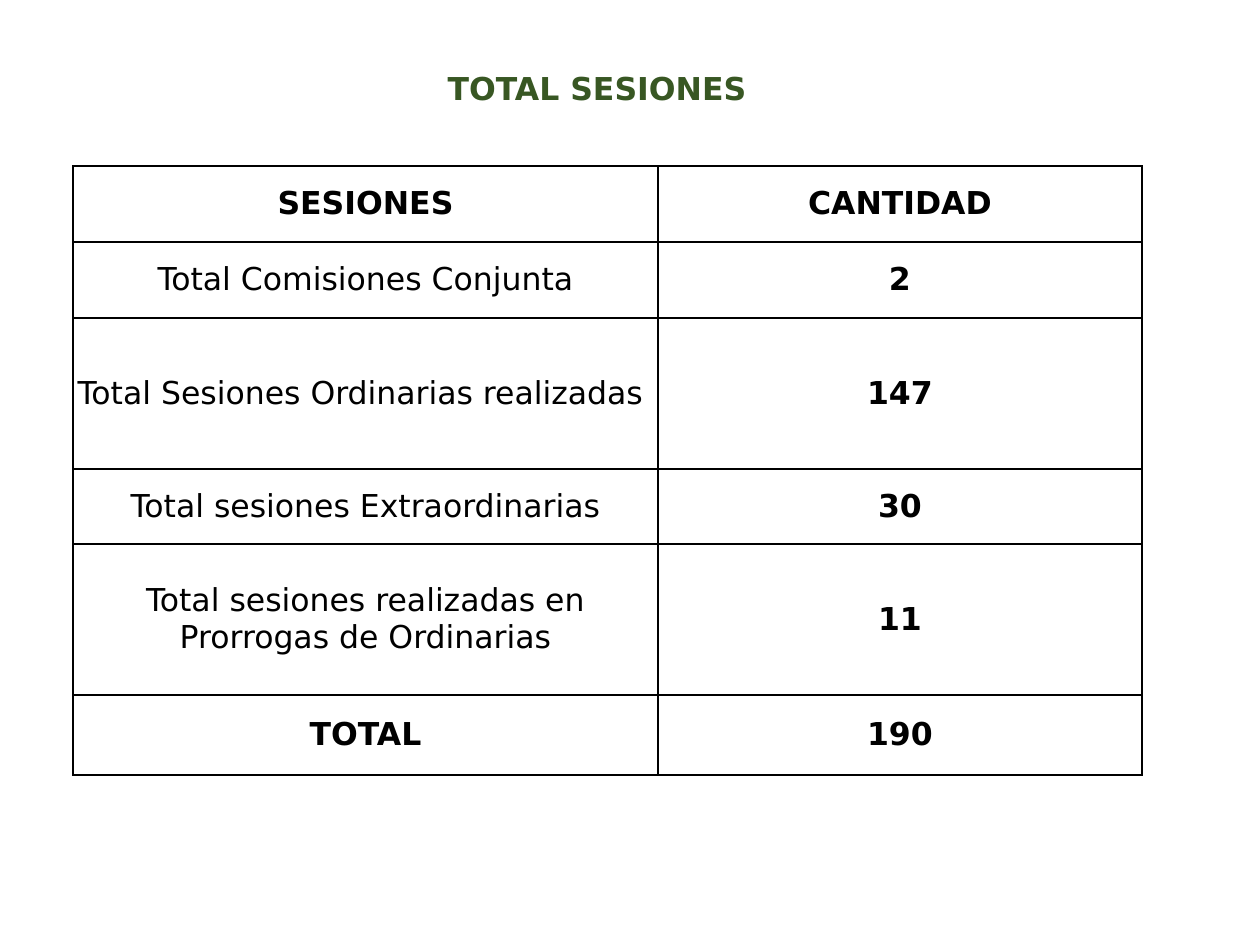
from lxml.etree import SubElement
from pptx import Presentation
from pptx.dml.color import RGBColor
from pptx.enum.text import MSO_ANCHOR, MSO_AUTO_SIZE, PP_ALIGN
from pptx.oxml.ns import qn
from pptx.util import Pt

PX = 914400 / 126
FONT = "DejaVu Sans"
GREEN = "385723"
BLACK = "000000"
COLUMN_WIDTHS = [585, 484]
ROW_HEIGHTS = [76, 76, 151, 75, 151, 80]
SESSIONS = [
    ("SESIONES", "CANTIDAD"),
    ("Total Comisiones Conjunta", "2"),
    ("Total Sesiones Ordinarias realizadas ", "147"),
    ("Total sesiones Extraordinarias", "30"),
    ("Total sesiones realizadas en Prorrogas de Ordinarias", "11"),
    ("TOTAL", "190"),
]


def px(length):
    return round(length * PX)


def color(code):
    return RGBColor.from_string(code)


def write(frame, text, ink, bold):
    frame.text = text
    para = frame.paragraphs[0]
    para.alignment = PP_ALIGN.CENTER
    font = para.runs[0].font
    font.name = FONT
    font.size = Pt(18)
    font.bold = bold
    font.color.rgb = color(ink)


def add_title(page, text, left, top, width, height):
    box = page.shapes.add_textbox(px(left), px(top), px(width), px(height))
    frame = box.text_frame
    frame.word_wrap = False
    frame.auto_size = MSO_AUTO_SIZE.SHAPE_TO_FIT_TEXT
    write(frame, text, GREEN, True)


def add_borders(cell, ink):
    properties = cell._tc.get_or_add_tcPr()
    for side in ("lnL", "lnR", "lnT", "lnB"):
        line = SubElement(properties, qn(f"a:{side}"), w=str(Pt(1)))
        fill = SubElement(line, qn("a:solidFill"))
        SubElement(fill, qn("a:srgbClr"), val=ink)


def style_cell(cell, text, bold):
    cell.margin_left = cell.margin_right = 0
    cell.margin_top = cell.margin_bottom = 0
    cell.vertical_anchor = MSO_ANCHOR.MIDDLE
    add_borders(cell, BLACK)
    cell.fill.background()
    write(cell.text_frame, text, BLACK, bold)


def add_sessions_table(page, left, top):
    table = page.shapes.add_table(
        len(SESSIONS), len(COLUMN_WIDTHS), px(left), px(top),
        px(sum(COLUMN_WIDTHS)), px(sum(ROW_HEIGHTS)),
    ).table
    table.first_row = table.horz_banding = False
    for column, width in zip(table.columns, COLUMN_WIDTHS):
        column.width = px(width)
    for row, height in zip(table.rows, ROW_HEIGHTS):
        row.height = px(height)
    last = len(SESSIONS) - 1
    for i, (label, amount) in enumerate(SESSIONS):
        style_cell(table.cell(i, 0), label, i in (0, last))
        style_cell(table.cell(i, 1), amount, True)


def main():
    deck = Presentation()
    deck.slide_width = px(1260)
    deck.slide_height = px(945)
    page = deck.slides.add_slide(deck.slide_layouts[6])
    add_title(page, "TOTAL SESIONES", 430, 63, 334, 50)
    add_sessions_table(page, 73, 166)
    deck.save("out.pptx")


if __name__ == "__main__":
    main()
